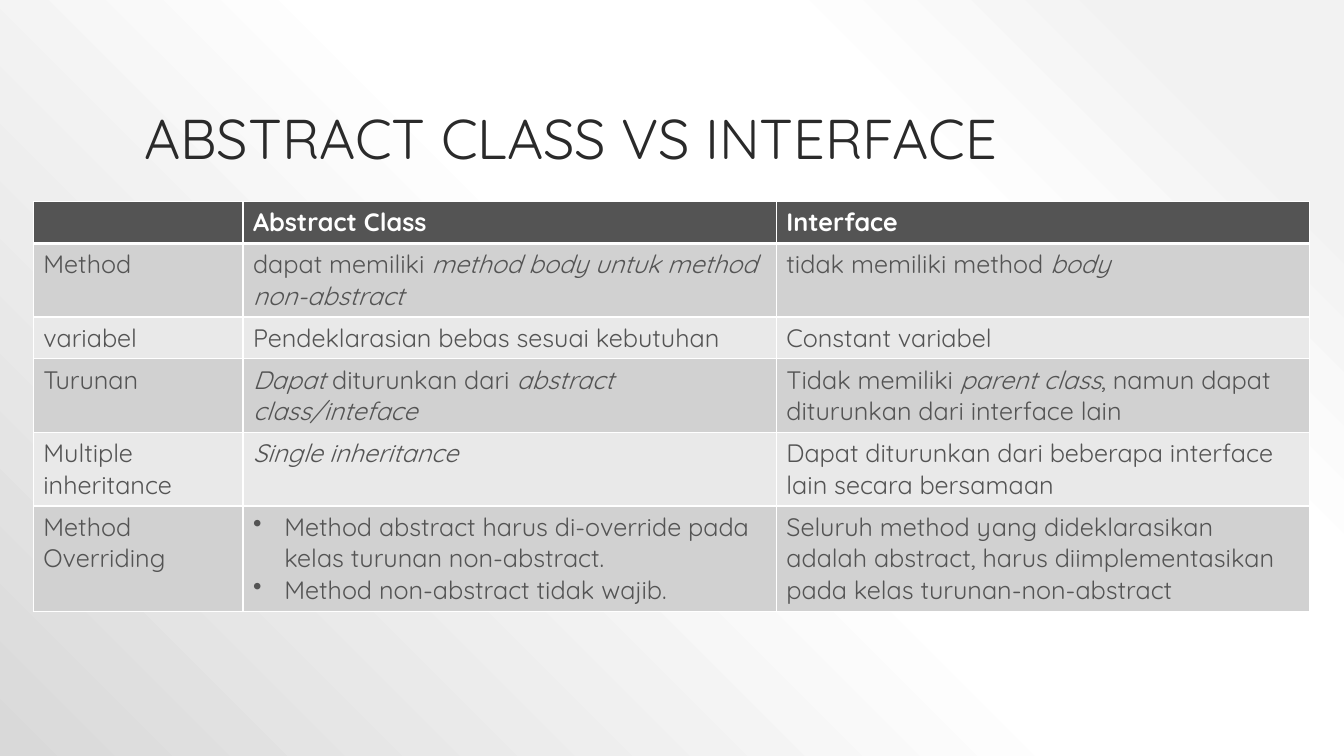
from lxml import etree
from pptx import Presentation, util as u
from pptx.dml.color import RGBColor
from pptx.enum import text
from pptx.oxml import ns

FONT = "Quicksand"
DARK, WHITE, BANDS = "545454", "FFFFFF", ("E9E9E9", "D1D1D1")
LINE_HEIGHT, CELL_PADDING = 0.315, 0.1


def paint(target, color):
    """Give a font or a fill one solid colour."""
    if hasattr(target, "solid"):
        target.solid()
        target = target.fore_color
    else:
        target = target.color
    target.rgb = RGBColor.from_string(color)


def add_xml(parent, tag, **attributes):
    return etree.SubElement(parent, ns.qn(tag), attributes)


deck = Presentation()
deck.slide_width, deck.slide_height = u.Inches(13.33), u.Inches(7.5)
slide = deck.slides.add_slide(deck.slide_layouts[5])

# Background: circular gradient centred on the top right corner
backdrop = slide.background.fill
backdrop.gradient()
gradient = slide.background._cSld.find(".//" + ns.qn("a:gradFill"))
for part in list(gradient):
    gradient.remove(part)
stops = add_xml(gradient, "a:gsLst")
for share, color in ((10, "F2F2F2"), (28, WHITE), (48, WHITE), (100, "D9D9D9")):
    stop = add_xml(stops, "a:gs", pos=str(share * 1000))
    add_xml(stop, "a:srgbClr", val=color)
circle = add_xml(gradient, "a:path", path="circle")
add_xml(circle, "a:fillToRect", l="100000", b="100000")

# Title
title = slide.shapes.title
title.left, title.top = u.Inches(1.33), u.Inches(0.3)
title.width, title.height = u.Inches(10.67), u.Inches(1.45)
title.text_frame.text = "ABSTRACT CLASS VS INTERFACE"
title.text_frame.vertical_anchor = text.MSO_ANCHOR.BOTTOM
title.text_frame.auto_size = text.MSO_AUTO_SIZE.NONE
heading = title.text_frame.paragraphs[0]
heading.alignment = text.PP_ALIGN.LEFT
heading.line_spacing = 0.9
heading.font.name, heading.font.size = FONT, u.Pt(40)
paint(heading.font, "2A2A2A")

# Comparison: lines of text per row, then the cells; asterisks enclose italics
comparison = [
    (1, "", "Abstract Class", "Interface"),
    (2, "Method", "dapat memiliki *method body untuk method non-abstract*",
     "tidak memiliki method *body*"),
    (1, "variabel", "Pendeklarasian bebas sesuai kebutuhan", "Constant variabel"),
    (2, "Turunan", "*Dapat *diturunkan dari *abstract class/inteface*",
     "Tidak memiliki *parent class*, namun dapat diturunkan dari interface lain"),
    (2, "Multiple inheritance", "*Single inheritance*",
     "Dapat diturunkan dari beberapa interface lain secara bersamaan"),
    (3, "Method Overriding",
     "Method abstract harus di-override pada kelas turunan non-abstract.\n"
     "Method non-abstract tidak wajib.",
     "Seluruh method yang dideklarasikan adalah abstract, "
     "harus diimplementasikan pada kelas turunan-non-abstract"),
]
heights = [CELL_PADDING + LINE_HEIGHT * lines for lines, *_ in comparison]
widths = (2.08, 5.29, 5.29)
table = slide.shapes.add_table(
    len(heights), len(widths), u.Inches(0.33), u.Inches(2),
    u.Inches(sum(widths)), u.Inches(sum(heights))).table
for column, width in zip(table.columns, widths):
    column.width = u.Inches(width)

for row, (lines, *entries) in enumerate(comparison):
    table.rows[row].height = u.Inches(heights[row])
    is_header = row == 0
    for column, entry in enumerate(entries):
        cell = table.cell(row, column)

        # White borders, thicker between the header and the body
        for side in "LRTB":
            thick = (row, side) in ((0, "B"), (1, "T"))
            border = add_xml(cell._tc.get_or_add_tcPr(), f"a:ln{side}",
                             w=str(u.Pt(3 if thick else 1)))
            add_xml(add_xml(border, "a:solidFill"), "a:srgbClr", val=WHITE)
        paint(cell.fill, DARK if is_header else BANDS[row % 2])

        # Text, bulleted where a cell lists several points
        points = entry.split("\n")
        for index, point in enumerate(points):
            frame = cell.text_frame
            paragraph = frame.add_paragraph() if index else frame.paragraphs[0]
            paragraph.font.name, paragraph.font.size = FONT, u.Pt(18)
            paragraph.font.bold = is_header
            paint(paragraph.font, WHITE if is_header else DARK)
            if len(points) > 1:
                properties = paragraph._p.get_or_add_pPr()
                properties.set("marL", str(u.Inches(0.31)))
                properties.set("indent", str(-u.Inches(0.31)))
                bullet = properties.makeelement(ns.qn("a:buChar"), {"char": "•"})
                properties.insert(0, bullet)
            for position, piece in enumerate(point.split("*")):
                if piece:
                    run = paragraph.add_run()
                    run.text = piece
                    if position % 2:
                        run.font.italic = True

deck.save("out.pptx")
